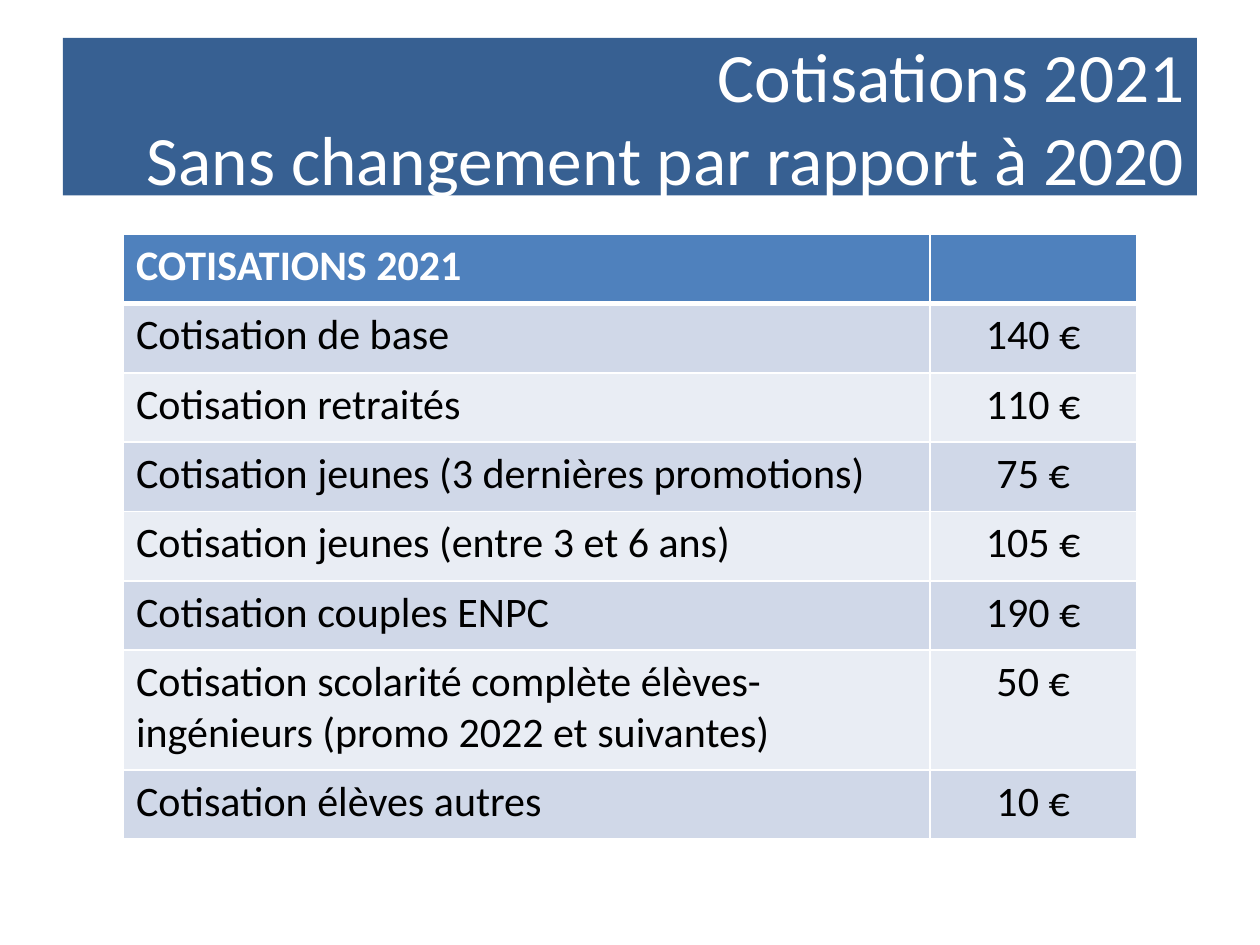
from dataclasses import dataclass
from typing import Any

from lxml import etree
from pptx import Presentation
from pptx import util as u
from pptx.dml.color import RGBColor
from pptx.enum import shapes, text
from pptx.oxml import ns

PX = 9144  # EMU per px, 100 px to the inch


@dataclass(frozen=True)
class Theme:
    font: str = "Calibri"
    title_size: float = 39.6
    table_size: float = 24
    banner: str = "376092"
    header: str = "4F81BD"
    bands: tuple[str, str] = ("D0D8E8", "E9EDF4")
    light: str = "FFFFFF"
    dark: str = "000000"


@dataclass(frozen=True)
class Fee:
    label: str
    amount: str
    height: int = 55


THEME = Theme()
COLUMNS = (640, 164)
ROWS = (
    Fee("COTISATIONS 2021", ""),
    Fee("Cotisation de base", "140 €"),
    Fee("Cotisation retraités", "110 €"),
    Fee("Cotisation jeunes (3 dernières promotions)", "75 €"),
    Fee("Cotisation jeunes (entre 3 et 6 ans)", "105 €"),
    Fee("Cotisation couples ENPC", "190 €"),
    Fee("Cotisation scolarité complète élèves-ingénieurs (promo 2022 et suivantes)",
        "50 €", 95),
    Fee("Cotisation élèves autres", "10 €"),
)


def px(*lengths: int) -> list[int]:
    return [length * PX for length in lengths]


def paint(target: Any, color: str) -> None:
    target.fill.solid()
    target.fill.fore_color.rgb = RGBColor.from_string(color)


def write(frame: Any, words: str, align: Any, color: str, **formats: Any) -> None:
    para = frame.paragraphs[0]
    para.text = words
    para.alignment = align
    for span in para.runs:
        span.font.color.rgb = RGBColor.from_string(color)
        for name, value in {"name": THEME.font, **formats}.items():
            setattr(span.font, name, value)


def add_border(cell: Any, side: str, points: int) -> None:
    properties = cell._tc.get_or_add_tcPr()
    line = etree.SubElement(properties, ns.qn(f"a:ln{side}"), w=str(u.Pt(points)))
    fill = etree.SubElement(line, ns.qn("a:solidFill"))
    etree.SubElement(fill, ns.qn("a:srgbClr"), val=THEME.light)


def add_banner(page: Any, words: str) -> None:
    box = page.shapes.add_shape(shapes.MSO_SHAPE.RECTANGLE, *px(50, 30, 900, 125))
    box.shadow.inherit = False
    paint(box, THEME.banner)
    box.line.fill.background()
    frame = box.text_frame
    frame.word_wrap = True
    frame.vertical_anchor = text.MSO_ANCHOR.MIDDLE
    write(frame, words, text.PP_ALIGN.RIGHT, THEME.light, size=u.Pt(THEME.title_size))


def add_fee_table(page: Any, fees: tuple[Fee, ...]) -> None:
    height = sum(fee.height for fee in fees)
    area = px(98, 186, sum(COLUMNS), height)
    table = page.shapes.add_table(len(fees), len(COLUMNS), *area).table
    for column, width in zip(table.columns, COLUMNS):
        column.width = width * PX
    aligns = (text.PP_ALIGN.LEFT, text.PP_ALIGN.CENTER)
    for index, fee in enumerate(fees):
        table.rows[index].height = fee.height * PX
        is_header = index == 0
        fill = THEME.header if is_header else THEME.bands[(index - 1) % 2]
        color = THEME.light if is_header else THEME.dark
        # The rule under the header is thicker than the others
        borders = {"L": 1, "R": 1, "T": 3 if index == 1 else 1, "B": 3 if is_header else 1}
        for cell, words, align in zip(table.rows[index].cells, (fee.label, fee.amount), aligns):
            write(cell.text_frame, words, align, color,
                  size=u.Pt(THEME.table_size), bold=is_header)
            for side, points in borders.items():
                add_border(cell, side, points)
            paint(cell, fill)


def main() -> None:
    deck = Presentation()
    deck.slide_width, deck.slide_height = px(1000, 750)
    page = deck.slides.add_slide(deck.slide_layouts[6])
    # Title banner, then the table of fees
    add_banner(page, "Cotisations 2021\vSans changement par rapport à 2020")
    add_fee_table(page, ROWS)
    deck.save("out.pptx")


if __name__ == "__main__":
    main()
